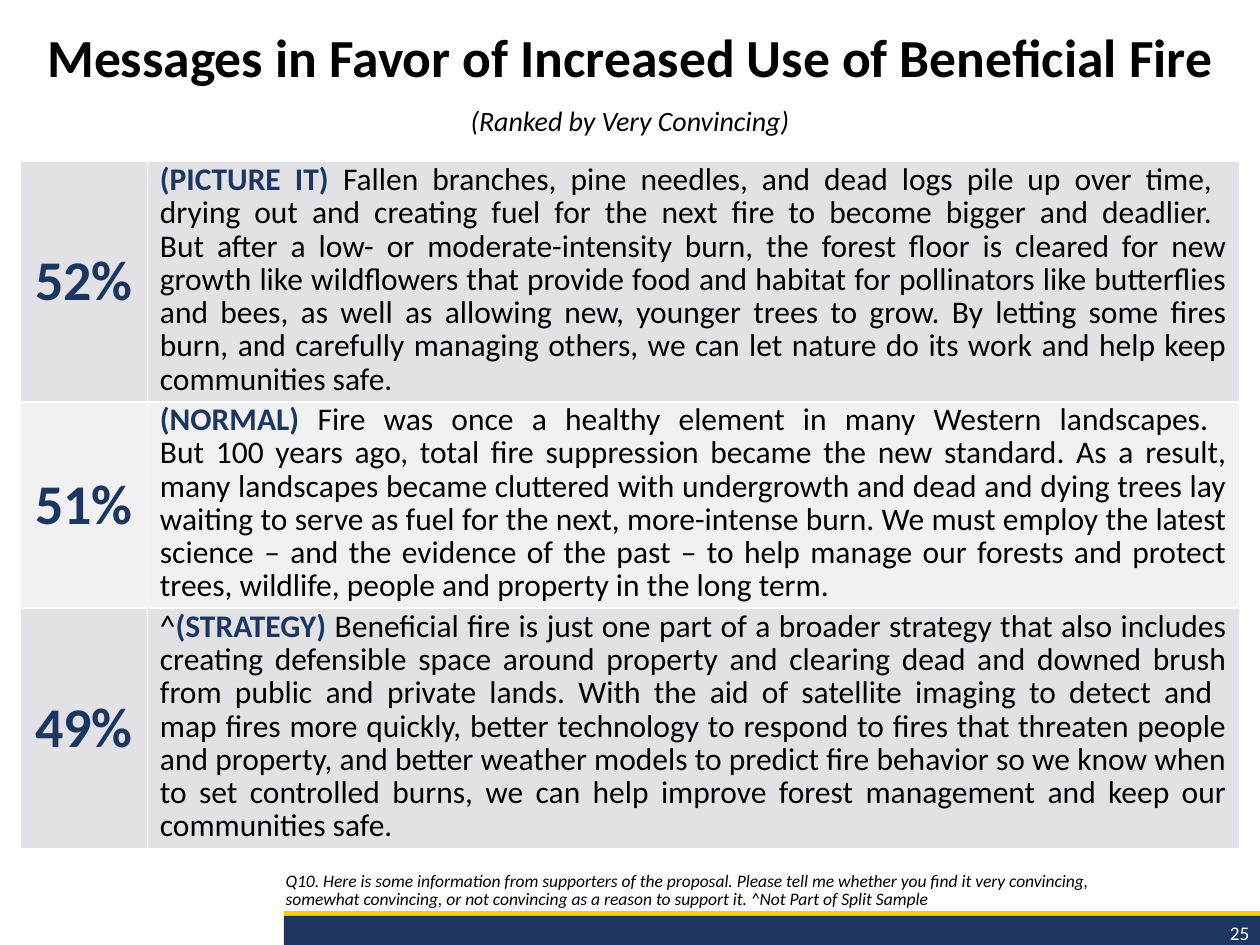
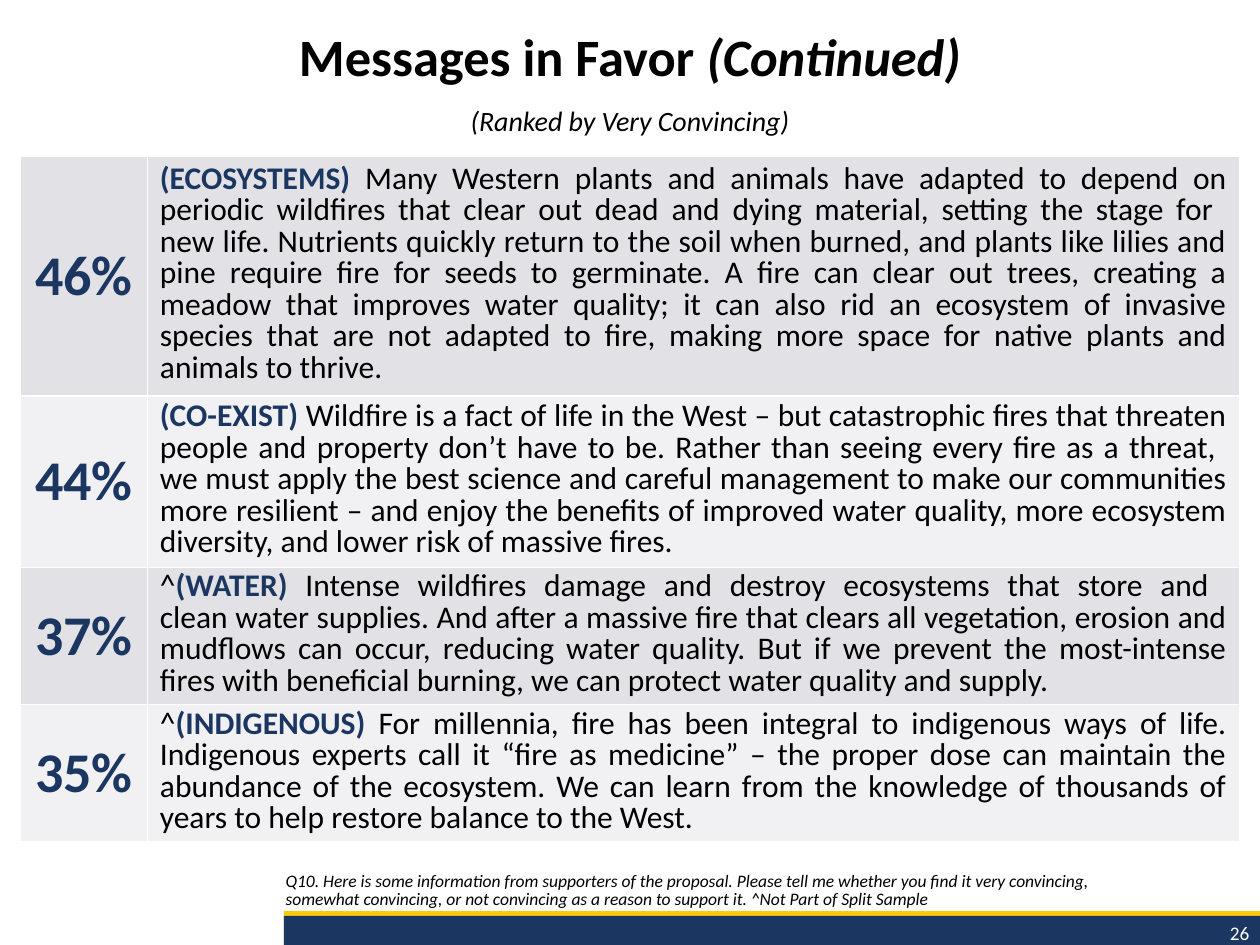
from lxml import etree
from pptx import Presentation
from pptx.dml.color import RGBColor
from pptx.enum.shapes import MSO_SHAPE
from pptx.enum.text import MSO_ANCHOR, MSO_AUTO_SIZE, PP_ALIGN
from pptx.oxml.ns import qn
from pptx.util import Pt

RECT = MSO_SHAPE.RECTANGLE
TOP, MID, LOW = MSO_ANCHOR.TOP, MSO_ANCHOR.MIDDLE, MSO_ANCHOR.BOTTOM
LEFT, MIDST, RIGHT, FULL = (
    PP_ALIGN.LEFT, PP_ALIGN.CENTER, PP_ALIGN.RIGHT, PP_ALIGN.JUSTIFY)

BLACK = RGBColor(0x00, 0x00, 0x00)
WHITE = RGBColor(0xFF, 0xFF, 0xFF)
NAVY = RGBColor(0x1B, 0x36, 0x61)
INK = RGBColor(0x1B, 0x36, 0x60)
GOLD = RGBColor(0xFC, 0xCA, 0x09)
ROWS = (RGBColor(0xE2, 0xE2, 0xE6), RGBColor(0xF1, 0xF1, 0xF3))

FACE = "Calibri"
WIDE, HIGH = 720, 540
PLAIN = dict(size=Pt(18), bold=False, color=BLACK)
TAG = dict(size=Pt(18), bold=True, color=INK)
SHARE = dict(size=Pt(32), bold=True, color=INK)
NOTE = dict(size=Pt(10), italic=True, color=BLACK)
RANK = dict(size=Pt(16), italic=True, color=BLACK)
PAGE = dict(size=Pt(11), color=WHITE)

RANKED = "(Ranked by Very Convincing)"
ASKED = (
    "Q10. Here is some information from supporters of the proposal. "
    "Please tell me whether you find it very convincing, \n"
    "somewhat convincing, or not convincing as a reason to support it. "
    "^Not Part of Split Sample")

# Each message: share, mark, tag, text, row height
FIRST = [
    ("52%", "", "(PICTURE IT) ",
     "Fallen branches, pine needles, and dead logs pile up over time, \n"
     "drying out and creating fuel for the next fire to become bigger and "
     "deadlier. \nBut after a low- or moderate-intensity burn, the forest "
     "floor is cleared for new growth like wildflowers that provide food and "
     "habitat for pollinators like butterflies and bees, as well as allowing "
     "new, younger trees to grow. By letting some fires burn, and carefully "
     "managing others, we can let nature do its work and help keep "
     "communities safe.", 137.3),
    ("51%", "", "(NORMAL) ",
     "Fire was once a healthy element in many Western landscapes. \n"
     "But 100 years ago, total fire suppression became the new standard. As "
     "a result, many landscapes became cluttered with undergrowth and dead "
     "and dying trees lay waiting to serve as fuel for the next, "
     "more-intense burn. We must employ the latest science – and the "
     "evidence of the past – to help manage our forests and protect trees, "
     "wildlife, people and property in the long term.", 118),
    ("49%", "^", "(STRATEGY) ",
     "Beneficial fire is just one part of a broader strategy that also "
     "includes creating defensible space around property and clearing dead "
     "and downed brush from public and private lands. With the aid of "
     "satellite imaging to detect and \nmap fires more quickly, better "
     "technology to respond to fires that threaten people and property, and "
     "better weather models to predict fire behavior so we know when to set "
     "controlled burns, we can help improve forest management and keep our "
     "communities safe.", 137.3),
]
SECOND = [
    ("46%", "", "(ECOSYSTEMS) ",
     "Many Western plants and animals have adapted to depend on periodic "
     "wildfires that clear out dead and dying material, setting the stage "
     "for \nnew life. Nutrients quickly return to the soil when burned, and "
     "plants like lilies and pine require fire for seeds to germinate. A "
     "fire can clear out trees, creating a meadow that improves water "
     "quality; it can also rid an ecosystem of invasive species that are "
     "not adapted to fire, making more space for native plants and animals "
     "to thrive.", 137),
    ("44%", "", "(CO-EXIST) ",
     "Wildfire is a fact of life in the West – but catastrophic fires that "
     "threaten people and property don’t have to be. Rather than seeing "
     "every fire as a threat, \nwe must apply the best science and careful "
     "management to make our communities more resilient – and enjoy the "
     "benefits of improved water quality, more ecosystem diversity, and "
     "lower risk of massive fires.", 98),
    ("37%", "^", "(WATER) ",
     "Intense wildfires damage and destroy ecosystems that store and \n"
     "clean water supplies. And after a massive fire that clears all "
     "vegetation, erosion and mudflows can occur, reducing water quality. "
     "But if we prevent the most-intense fires with beneficial burning, we "
     "can protect water quality and supply.", 78.5),
    ("35%", "^", "(INDIGENOUS) ",
     "For millennia, fire has been integral to indigenous ways of life. "
     "Indigenous experts call it “fire as medicine” – the proper dose can "
     "maintain the abundance of the ecosystem. We can learn from the "
     "knowledge of thousands of years to help restore balance to the West.",
     78.5),
]


def style(font, form):
    font.name = FACE
    for key, value in form.items():
        if key == "color":
            font.color.rgb = value
        else:
            setattr(font, key, value)


def write(para, runs, align, space=None):
    """Fill a paragraph with (text, format) runs; a newline breaks the line."""
    para.alignment = align
    if space:
        para.line_spacing = space
    for text, form in runs:
        for count, line in enumerate(text.split("\n")):
            if count:
                para.add_line_break()
            run = para.add_run()
            run.text = line
            style(run.font, form)


def place(shape, left, top, width, height):
    box = dict(left=left, top=top, width=width, height=height)
    for key, value in box.items():
        setattr(shape, key, Pt(value))


def add_title(slide, runs):
    title = slide.shapes.title
    place(title, 0, 14.4, WIDE, 60)
    frame = title.text_frame
    frame.auto_size = MSO_AUTO_SIZE.NONE
    frame.vertical_anchor = TOP
    write(frame.paragraphs[0], runs, MIDST, 0.9)


def add_note(slide):
    body = slide.placeholders[1]
    place(body, 156, 484.5, 564, 39)
    frame = body.text_frame
    frame.auto_size = MSO_AUTO_SIZE.NONE
    frame.vertical_anchor = LOW
    para = frame.paragraphs[0]
    props = para._p.get_or_add_pPr()
    props.set("marL", "0")
    props.set("indent", "0")
    etree.SubElement(props, qn("a:buNone"))
    para.space_before = Pt(0)
    write(para, [(ASKED, NOTE)], LEFT, 0.9)


def add_label(slide, text, form, align, *box):
    shape = slide.shapes.add_textbox(*map(Pt, box))
    shape.text_frame.word_wrap = True
    write(shape.text_frame.paragraphs[0], [(text, form)], align)


def add_band(slide, top, color):
    """Draw a bar from the given top to the foot of the slide."""
    band = slide.shapes.add_shape(
        RECT, Pt(162.3), Pt(top), Pt(WIDE - 162.3), Pt(HIGH - top))
    band.shadow.inherit = False
    band.fill.solid()
    band.fill.fore_color.rgb = color
    band.line.fill.background()


def edge(cell):
    """Give a cell thin white borders."""
    props = cell._tc.get_or_add_tcPr()
    for side in "LRTB":
        line = etree.SubElement(props, qn("a:ln" + side), w=str(Pt(1)))
        fill = etree.SubElement(line, qn("a:solidFill"))
        etree.SubElement(fill, qn("a:srgbClr"), val=str(WHITE))


def fill_cell(cell, runs, align, side, top, color, space=None):
    edge(cell)
    cell.fill.solid()
    cell.fill.fore_color.rgb = color
    cell.vertical_anchor = MID
    cell.margin_left = cell.margin_right = Pt(side)
    cell.margin_top, cell.margin_bottom = Pt(top), Pt(0)
    write(cell.text_frame.paragraphs[0], runs, align, space)


def add_table(slide, items, top, pitch):
    high = sum(item[-1] for item in items)
    table = slide.shapes.add_table(
        len(items), 2, Pt(11.7), Pt(top), Pt(696.7), Pt(high)).table
    table.first_row = table.horz_banding = False
    for col, width in zip(table.columns, (72.5, 624.2)):
        col.width = Pt(width)
    for num, (share, mark, tag, text, tall) in enumerate(items):
        table.rows[num].height = Pt(tall)
        color = ROWS[num % 2]
        runs = [(tag, TAG), (text, PLAIN)]
        if mark:
            runs.insert(0, (mark, PLAIN))
        fill_cell(table.cell(num, 0), [(share, SHARE)], MIDST, 0.7, 0, color)
        fill_cell(table.cell(num, 1), runs, FULL, 7.2, 0.7, color, Pt(pitch))


def add_page(deck, page, title, items, top, pitch):
    slide = deck.slides.add_slide(deck.slide_layouts[1])
    add_band(slide, 520.6, GOLD)
    add_band(slide, 523.4, NAVY)
    add_label(slide, str(page), PAGE, RIGHT, 615, 522.7, 106, 21)
    add_label(slide, RANKED, RANK, MIDST, 0, 55.4, WIDE, 26.6)
    add_table(slide, items, top, pitch)
    add_note(slide)
    add_title(slide, title)


def main():
    deck = Presentation()
    deck.slide_width, deck.slide_height = Pt(WIDE), Pt(HIGH)
    large = dict(size=Pt(30.6), bold=True, color=BLACK)
    head = dict(large, size=Pt(30))
    add_page(deck, 25, [
        ("Messages in Favor of Increased Use of Beneficial Fire", large),
    ], FIRST, 92.3, 19)
    add_page(deck, 26, [
        ("Messages in Favor ", head),
        ("(Continued)", dict(head, italic=True)),
    ], SECOND, 89.2, 18)
    deck.save("out.pptx")


if __name__ == "__main__":
    main()
